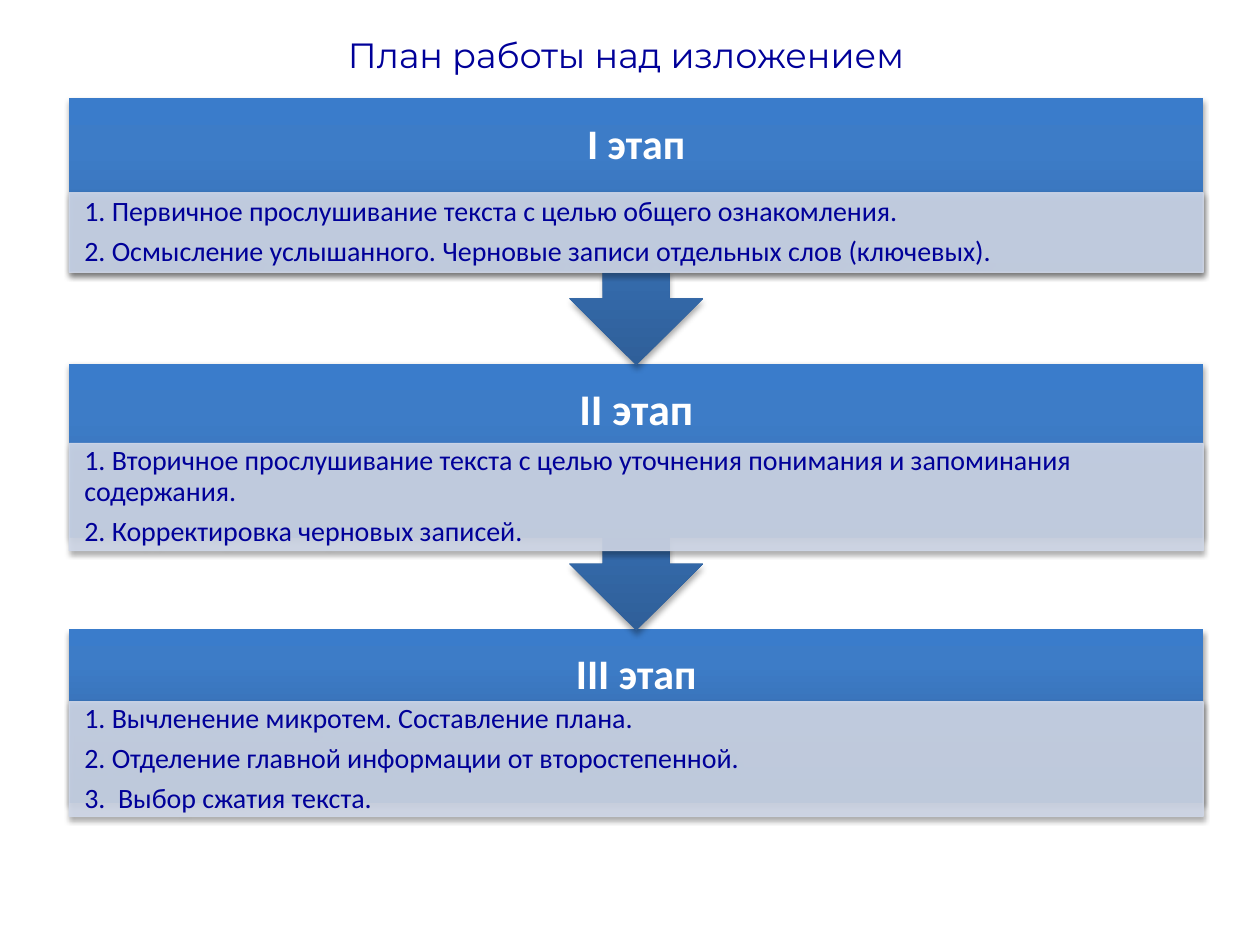
from copy import deepcopy

from lxml import etree
from pptx import Presentation
from pptx.dml.color import RGBColor
from pptx.enum.shapes import MSO_SHAPE
from pptx.enum.text import MSO_ANCHOR, PP_ALIGN
from pptx.oxml.ns import qn
from pptx.util import Pt

RECTANGLE = MSO_SHAPE.RECTANGLE
ARROW_CALLOUT = MSO_SHAPE.DOWN_ARROW_CALLOUT
LEFT, CENTER = PP_ALIGN.LEFT, PP_ALIGN.CENTER
MIDDLE = MSO_ANCHOR.MIDDLE

NAVY = RGBColor(0x00, 0x00, 0x99)
WHITE = RGBColor(0xFF, 0xFF, 0xFF)
PANEL_BLUE = RGBColor(0xD0, 0xD8, 0xE8)
BLUE_GRADIENT = (
    (0, RGBColor(0x2F, 0x5F, 0x99)),
    (0.8, RGBColor(0x3D, 0x7C, 0xC7)),
    (1, RGBColor(0x3A, 0x7C, 0xCB)),
)

BLOCK_LEFT, BLOCK_WIDTH = 39.6, 648
FIRST_TOP, STAGE_STEP = 56.2, 151.6
CALLOUT_HEIGHT, LAST_HEIGHT, HEADING_HEIGHT = 152.6, 99.4, 54

# Heading, heading size, panel top, panel height, panel lines
STAGES = (
    ("I этап", 24, 110.2, 45.4, (
        "1. Первичное прослушивание текста с целью общего ознакомления.",
        "2. Осмысление услышанного. Черновые записи отдельных слов (ключевых).",
    )),
    ("II этап", 25, 253.4, 61.2, (
        "1. Вторичное прослушивание текста с целью уточнения понимания и запоминания содержания.",
        "2. Корректировка черновых записей.",
    )),
    ("III этап", 24, 401, 65.5, (
        "1. Вычленение микротем. Составление плана.",
        "2. Отделение главной информации от второстепенной.",
        "3.  Выбор сжатия текста.",
    )),
)


def write_text(shape, *lines, size, color, font="Calibri", bold=False,
               align=LEFT, margins=(7.2, 3.6), line_spacing=None, space_after=0):
    """Fill the shape with one paragraph per line; margins are (sides, top and bottom)."""
    frame = shape.text_frame
    frame.word_wrap = True
    frame.vertical_anchor = MIDDLE
    frame.margin_left = frame.margin_right = Pt(margins[0])
    frame.margin_top = frame.margin_bottom = Pt(margins[1])
    frame.text = "\n".join(lines)
    for paragraph in frame.paragraphs:
        paragraph.alignment = align
        paragraph.line_spacing = line_spacing
        paragraph.space_after = Pt(space_after)
        text_font = paragraph.runs[0].font
        text_font.name, text_font.size = font, Pt(size)
        text_font.bold, text_font.color.rgb = bold, color


class StageSlide:
    def __init__(self, slide):
        self.slide = slide

    def title(self, text):
        shape = self.slide.shapes.title
        shape.left, shape.top = Pt(33.8), Pt(11.5)
        shape.width, shape.height = Pt(648), Pt(39.6)
        write_text(shape, text, size=20, color=NAVY, font="Montserrat", align=CENTER)

    def box(self, kind, top, height):
        """Add a full-width shape with a soft shadow below it."""
        shape = self.slide.shapes.add_shape(
            kind, Pt(BLOCK_LEFT), Pt(top), Pt(BLOCK_WIDTH), Pt(height))
        shape.shadow.inherit = False
        effects = shape._element.spPr.find(qn("a:effectLst"))
        shadow = etree.SubElement(
            effects, qn("a:outerShdw"), blurRad=str(Pt(3.1)), dist=str(Pt(1.8)),
            dir="5400000", rotWithShape="0")
        black = etree.SubElement(shadow, qn("a:srgbClr"), val="000000")
        etree.SubElement(black, qn("a:alpha"), val="35000")
        return shape

    def block(self, kind, top, height):
        """Add the blue gradient shape behind a stage."""
        shape = self.box(kind, top, height)
        shape.line.fill.background()
        shape.fill.gradient()
        stop_list = shape._element.spPr.find(".//" + qn("a:gsLst"))
        stop_list.append(deepcopy(stop_list[0]))
        for stop, (position, color) in zip(shape.fill.gradient_stops, BLUE_GRADIENT):
            stop.position, stop.color.rgb = position, color
        shape.fill.gradient_angle = 90

    def heading(self, text, top, size):
        shape = self.slide.shapes.add_textbox(
            Pt(BLOCK_LEFT), Pt(top), Pt(BLOCK_WIDTH), Pt(HEADING_HEIGHT))
        write_text(shape, text, size=size, color=WHITE, bold=True, align=CENTER,
                   margins=(13.7, 13.7), line_spacing=0.9, space_after=0.35 * size)

    def panel(self, lines, top, height):
        shape = self.box(RECTANGLE, top, height)
        shape.fill.solid()
        shape.fill.fore_color.rgb = PANEL_BLUE
        shape.line.color.rgb = PANEL_BLUE
        shape.line.width = Pt(0.75)
        for color in shape._element.spPr.findall(".//" + qn("a:solidFill") + "/*"):
            etree.SubElement(color, qn("a:alpha"), val="90000")
        write_text(shape, *lines, size=16, color=NAVY, margins=(8.6, 1.4),
                   line_spacing=0.9, space_after=5.6)


def main():
    presentation = Presentation()
    presentation.slide_width, presentation.slide_height = Pt(720), Pt(540)
    title_only = presentation.slide_layouts[5]
    page = StageSlide(presentation.slides.add_slide(title_only))
    page.title("План работы над изложением")

    # The last stage goes first, so that each arrow tip lies over the next block
    last = len(STAGES) - 1
    for index in range(last, -1, -1):
        heading, size, panel_top, panel_height, lines = STAGES[index]
        top = FIRST_TOP + index * STAGE_STEP
        if index == last:
            page.block(RECTANGLE, top, LAST_HEIGHT)
        else:
            page.block(ARROW_CALLOUT, top, CALLOUT_HEIGHT)
        page.heading(heading, top, size)
        page.panel(lines, panel_top, panel_height)

    presentation.save("out.pptx")


if __name__ == "__main__":
    main()
